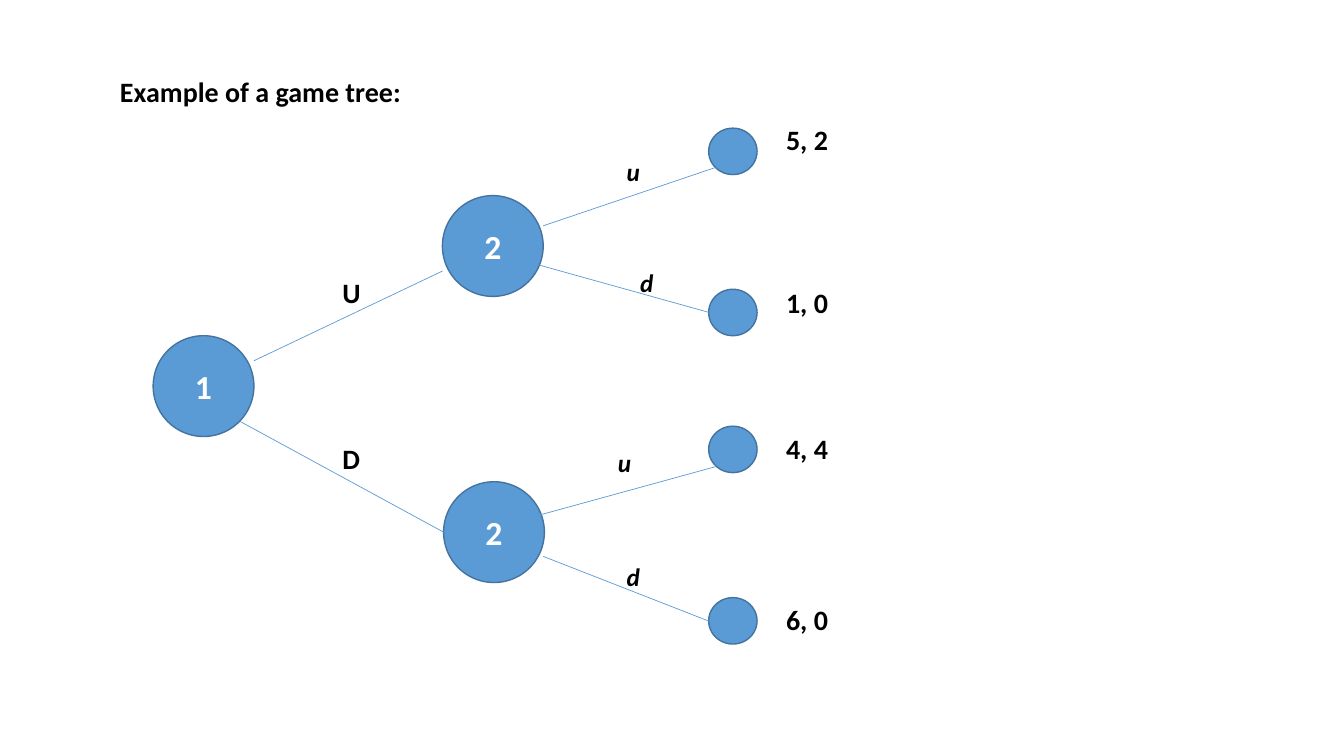
from dataclasses import dataclass

from lxml.etree import SubElement
from pptx import Presentation
from pptx.dml.color import RGBColor as RGB
from pptx.enum.shapes import MSO_CONNECTOR as CONN, MSO_SHAPE as SHAPE
from pptx.enum.text import MSO_ANCHOR as ANCHOR, PP_ALIGN as ALIGN
from pptx.oxml.ns import qn
from pptx.util import Cm, Pt

TITLE = "Example of a game tree:"

# Players' decision nodes: player, left, top (cm)
DECISIONS = [("1", 3.86, 8.46), ("2", 11.15, 4.93), ("2", 11.18, 12.14)]

# Terminal nodes: payoffs, top of node, top of payoff text (cm)
OUTCOMES = [
    ("5, 2", 3.23, 2.95),
    ("1, 0", 7.29, 7.06),
    ("4, 4", 10.74, 10.74),
    ("6, 0", 15.06, 15.06),
]

# Moves: name, start, end, label corner (cm)
FIRST_MOVES = [
    ("U", (6.4, 9.09), (11.15, 6.83), (8.38, 6.83)),
    ("D", (6.05, 10.62), (11.18, 13.41), (8.38, 11)),
]
SECOND_MOVES = [
    ("u", (13.69, 5.69), (18.03, 4.22), (15.54, 3.81)),
    ("d", (13.59, 6.68), (17.86, 7.87), (15.88, 6.6)),
    ("u", (13.59, 12.98), (18.03, 11.76), (15.32, 11.15)),
    ("d", (13.69, 14.02), (17.86, 15.65), (15.54, 14.02)),
]

DECISION_SIZE = (2.54, 2.54)
OUTCOME_SIZE = (1.22, 1.17)
OUTCOME_LEFT, PAYOFF_LEFT = 17.86, 19.56


@dataclass(frozen=True)
class Theme:
    font: str = "Calibri"
    fill: RGB = RGB(0x5B, 0x9B, 0xD5)
    outline: RGB = RGB(0x43, 0x73, 0x9E)
    dark: RGB = RGB(0, 0, 0)
    light: RGB = RGB(255, 255, 255)
    node_size: Pt = Pt(24)
    text_size: Pt = Pt(20)
    small_size: Pt = Pt(18)


THEME = Theme()


def write(sp, text, size, color=THEME.dark, italic=False, align=ALIGN.LEFT):
    p = sp.text_frame.paragraphs[0]
    p.alignment = align
    r = p.add_run()
    r.text = text
    font = r.font
    font.name, font.size, font.bold, font.italic = THEME.font, size, True, italic
    font.color.rgb = color


def add_node(s, left, top, size, player=None):
    sp = s.shapes.add_shape(SHAPE.OVAL, Cm(left), Cm(top), *map(Cm, size))
    sp.shadow.inherit = False
    sp.fill.solid()
    sp.fill.fore_color.rgb = THEME.fill
    sp.line.color.rgb = THEME.outline
    sp.line.width = Pt(1)
    if player:
        sp.text_frame.vertical_anchor = ANCHOR.MIDDLE
        write(sp, player, THEME.node_size, THEME.light, align=ALIGN.CENTER)


def add_label(s, text, left, top, width, height, size, italic=False):
    sp = s.shapes.add_textbox(Cm(left), Cm(top), Cm(width), Cm(height))
    sp.text_frame.word_wrap = True
    write(sp, text, size, italic=italic)


def add_branch(s, start, end):
    line = s.shapes.add_connector(CONN.STRAIGHT, *map(Cm, start + end))
    line.line.color.rgb = THEME.fill
    line.line.width = Pt(0.5)
    SubElement(line._element.spPr, qn("a:effectLst"))


def add_title(s):
    sp = s.shapes.title
    sp.left, sp.top, sp.width, sp.height = Cm(2.77), Cm(1.75), Cm(7.8), Cm(1.12)
    sp.text_frame.vertical_anchor = ANCHOR.TOP
    write(sp, TITLE, THEME.text_size)


def main():
    prs = Presentation()
    prs.slide_width, prs.slide_height = Cm(33.87), Cm(19.05)
    s = prs.slides.add_slide(prs.slide_layouts[5])
    add_title(s)

    for player, left, top in DECISIONS:
        add_node(s, left, top, DECISION_SIZE, player)
    for payoffs, node_top, text_top in OUTCOMES:
        add_node(s, OUTCOME_LEFT, node_top, OUTCOME_SIZE)
        add_label(s, payoffs, PAYOFF_LEFT, text_top, 1.91, 1.12, THEME.text_size)

    for name, start, end, corner in FIRST_MOVES:
        add_branch(s, start, end)
        add_label(s, name, *corner, 0.91, 1.12, THEME.text_size)
    for name, start, end, corner in SECOND_MOVES:
        add_branch(s, start, end)
        add_label(s, name, *corner, 0.8, 1.02, THEME.small_size, italic=True)

    prs.save("out.pptx")


if __name__ == "__main__":
    main()
